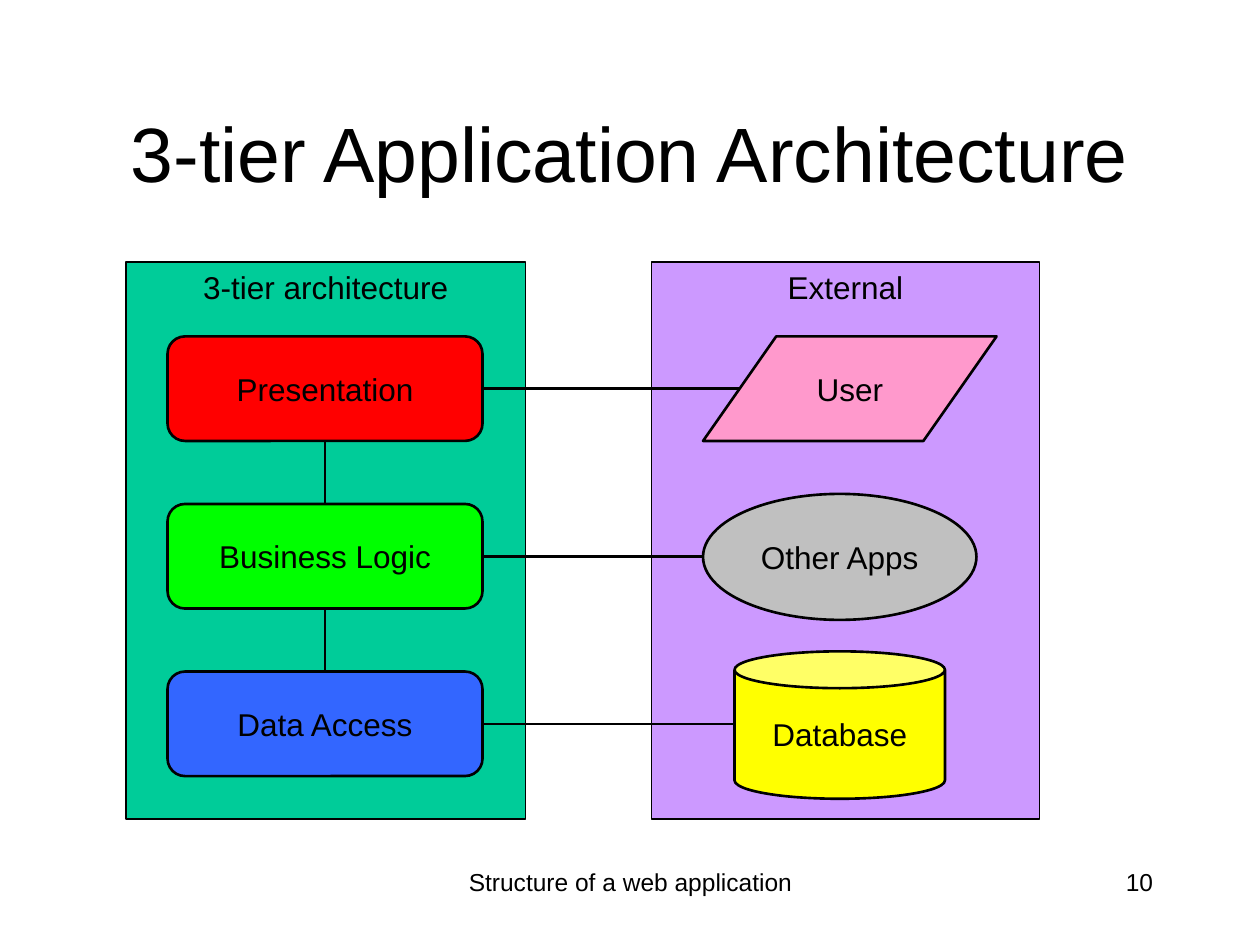
from pptx import Presentation
from pptx.dml.color import RGBColor
from pptx.enum import shapes, text
from pptx.oxml.ns import qn
from pptx.util import Inches, Pt
from lxml import etree

KIND = shapes.MSO_SHAPE
ALIGN = text.PP_ALIGN
ANCHOR = text.MSO_ANCHOR
BLACK = "000000"

# Content
TITLE = "3-tier Application Architecture"
FOOTER = "Structure of a web application"
PAGE = "10"
PANELS = [  # label, left, width, fill
    ("External", 5.17, 3.08, "CC99FF"),
    ("3-tier architecture", 1, 3.17, "00CC99"),
]
TIERS = [("Presentation", "FF0000"), ("Business Logic", "00FF00"), ("Data Access", "3366FF")]
EXTERNALS = [  # label, kind, adjustment, left, top, width, height, fill
    ("User", KIND.PARALLELOGRAM, 0.7, 5.58, 2.67, 2.33, 0.83, "FF99CC"),
    ("Other Apps", KIND.OVAL, None, 5.58, 3.92, 2.17, 1, "C0C0C0"),
    ("Database", KIND.CAN, 0.25, 5.83, 5.17, 1.67, 1.17, "FFFF00"),
]

# Grid of the tiers
TIER_LEFT, TIER_TOP, TIER_W, TIER_H, TIER_STEP = 1.33, 2.67, 2.5, 0.83, 1.33
PANEL_TOP, PANEL_H = 2.08, 4.42


def colour(hex_code):
    return RGBColor.from_string(hex_code)


def write(shape, words, size, align, anchor, wrap):
    frame = shape.text_frame
    frame.text = words
    frame.word_wrap = wrap
    frame.vertical_anchor = anchor
    paragraph = frame.paragraphs[0]
    paragraph.alignment = align
    font = paragraph.runs[0].font
    font.name, font.size = "Arial", Pt(size)
    font.color.rgb = colour(BLACK)


def add_box(kind, label, left, top, width, height, fill, line=1.5,
            anchor=ANCHOR.MIDDLE, adjustment=None):
    box = slide.shapes.add_shape(kind, Inches(left), Inches(top), Inches(width), Inches(height))
    box.shadow.inherit = False
    if adjustment is not None:
        box.adjustments[0] = adjustment
    box.fill.solid()
    box.fill.fore_color.rgb = colour(fill)
    box.line.color.rgb = colour(BLACK)
    box.line.width = Pt(line)
    write(box, label, 18, ALIGN.CENTER, anchor, False)


def add_link(x1, y1, x2, y2):
    link = slide.shapes.add_connector(shapes.MSO_CONNECTOR.STRAIGHT,
                                      Inches(x1), Inches(y1), Inches(x2), Inches(y2))
    link.line.color.rgb = colour(BLACK)
    link.line.width = Pt(1.5)
    etree.SubElement(link._element.spPr, qn("a:effectLst"))


prs = Presentation()
prs.slide_width, prs.slide_height = Inches(10), Inches(7.5)
slide = prs.slides.add_slide(prs.slide_layouts[5])

# Title
title = slide.shapes.title
title.left, title.top = Inches(0.75), Inches(0.58)
title.width, title.height = Inches(8.5), Inches(1.25)
write(title, TITLE, 44, ALIGN.CENTER, ANCHOR.MIDDLE, True)

# Footer and page number
for words, left, width, align in [(FOOTER, 3.42, 3.17, ALIGN.CENTER),
                                  (PAGE, 7.17, 2.08, ALIGN.RIGHT)]:
    note = slide.shapes.add_textbox(Inches(left), Inches(6.83), Inches(width), Inches(0.5))
    write(note, words, 14, align, ANCHOR.TOP, True)

# Background panels
for label, left, width, fill in PANELS:
    add_box(KIND.RECTANGLE, label, left, PANEL_TOP, width, PANEL_H, fill, 0.75, ANCHOR.TOP)

# Each tier, its external partner and the links between them
for row, ((tier, tier_fill), external) in enumerate(zip(TIERS, EXTERNALS)):
    top = TIER_TOP + row * TIER_STEP
    middle = top + TIER_H / 2
    add_box(KIND.ROUNDED_RECTANGLE, tier, TIER_LEFT, top, TIER_W, TIER_H, tier_fill,
            adjustment=0.167)

    label, kind, adjustment, left, ext_top, width, height, fill = external
    add_box(kind, label, left, ext_top, width, height, fill, adjustment=adjustment)

    slant = adjustment * height / 2 if kind == KIND.PARALLELOGRAM else 0
    add_link(TIER_LEFT + TIER_W, middle, left + slant, middle)
    if row:
        centre = TIER_LEFT + TIER_W / 2
        add_link(centre, top - TIER_STEP + TIER_H, centre, top)

prs.save("out.pptx")
